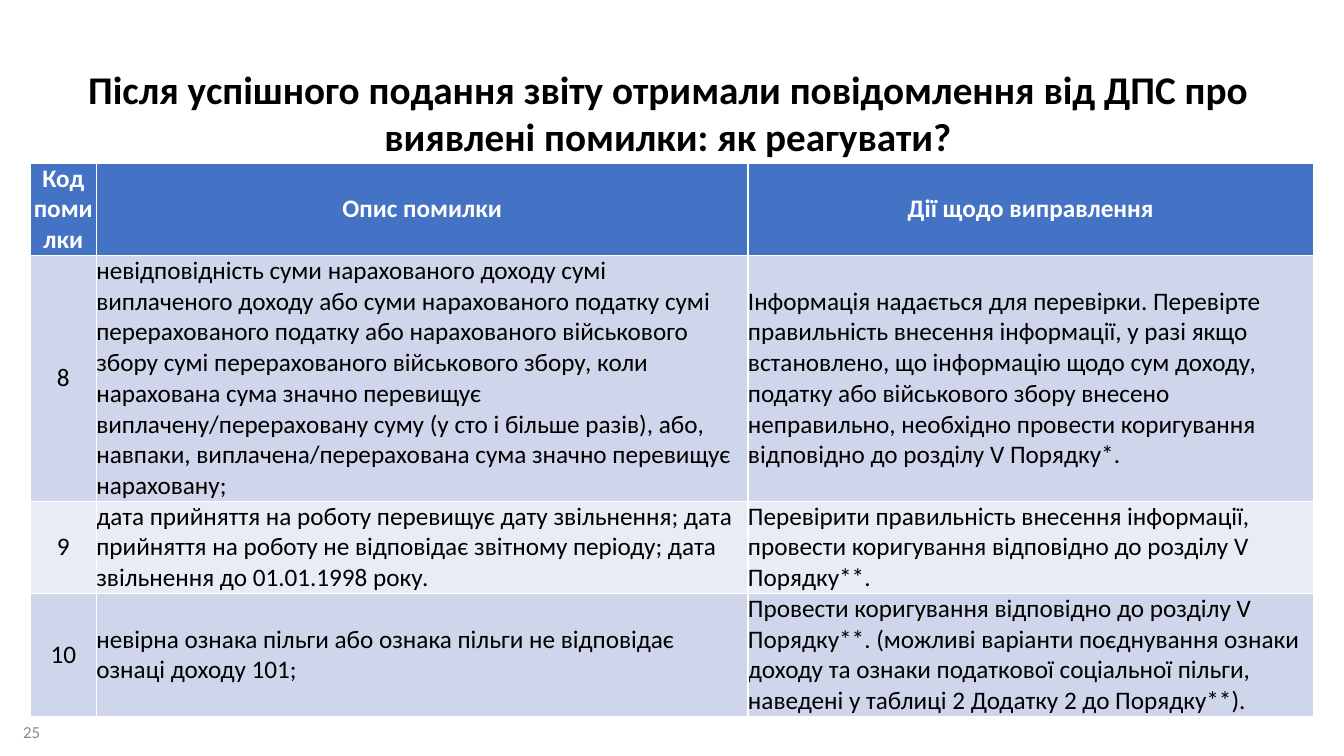
"""Build a slide with a table of report error codes and how to correct them."""
from pptx import Presentation
from pptx import util as u
from pptx.dml.color import RGBColor
from pptx.enum import text as t

THEME = {
    "font": "Calibri", "title": 28, "body": 18, "page": 12,
    "ink": "000000", "white": "FFFFFF", "grey": "898989",
    "head": "4472C4", "bands": ("CFD5EA", "E9EBF5"),
}
TITLE = "Після успішного подання звіту отримали повідомлення від ДПС про виявлені помилки: як реагувати?"
PAGE = "25"
HEAD = (("Код", "помилки"), ("Опис помилки",), ("Дії щодо виправлення",))
ERRORS = [
    ("8",
     "невідповідність суми нарахованого доходу сумі виплаченого доходу або суми нарахованого податку "
     "сумі перерахованого податку або нарахованого військового збору сумі перерахованого військового "
     "збору, коли нарахована сума значно перевищує виплачену/перераховану суму (у сто і більше разів), "
     "або, навпаки, виплачена/перерахована сума значно перевищує нараховану;",
     "Інформація надається для перевірки. Перевірте правильність внесення інформації, у разі якщо "
     "встановлено, що інформацію щодо сум доходу, податку або військового збору внесено неправильно, "
     "необхідно провести коригування відповідно до розділу V Порядку*."),
    ("9",
     "дата прийняття на роботу перевищує дату звільнення; дата прийняття на роботу не відповідає "
     "звітному періоду; дата звільнення до 01.01.1998 року.",
     "Перевірити правильність внесення інформації, провести коригування відповідно до розділу V Порядку**."),
    ("10",
     "невірна ознака пільги або ознака пільги не відповідає ознаці доходу 101;",
     "Провести коригування відповідно до розділу V Порядку**. (можливі варіанти поєднування ознаки "
     "доходу та ознаки податкової соціальної пільги, наведені у таблиці 2 Додатку 2 до Порядку**)."),
]
WIDTHS = (47.2, 465.5, 403.9)
LINES = (3, 8, 3, 4)
LINE = 21.95


def write(frame, paras, size, color, bold=False, center=False):
    """Put each string in its own paragraph, as one styled run."""
    for i, words in enumerate(paras):
        para = frame.add_paragraph() if i else frame.paragraphs[0]
        para.alignment = t.PP_ALIGN.CENTER if center else t.PP_ALIGN.LEFT
        run = para.add_run()
        run.text = words
        font = run.font
        font.name, font.size, font.bold = THEME["font"], u.Pt(THEME[size]), bold
        font.color.rgb = RGBColor.from_string(THEME[color])


def label(slide, box, words, anchor, *style):
    """Add a wrapped text box."""
    frame = slide.shapes.add_textbox(*map(u.Pt, box)).text_frame
    frame.word_wrap = True
    frame.vertical_anchor = anchor
    write(frame, [words], *style)


def grid(slide, left, top):
    """Add the error table."""
    rows = [HEAD] + [[(words,) for words in row] for row in ERRORS]
    table = slide.shapes.add_table(
        len(rows), len(WIDTHS), u.Pt(left), u.Pt(top),
        u.Pt(sum(WIDTHS)), u.Pt(sum(LINES) * LINE)).table
    for col, width in zip(table.columns, WIDTHS):
        col.width = u.Pt(width)
    for r, row in enumerate(rows):
        table.rows[r].height = u.Pt(LINES[r] * LINE)
        fill = THEME["bands"][(r - 1) % 2] if r else THEME["head"]
        for c, paras in enumerate(row):
            cell = table.cell(r, c)
            cell.margin_left = cell.margin_right = cell.margin_top = cell.margin_bottom = 0
            cell.vertical_anchor = t.MSO_ANCHOR.MIDDLE
            cell.fill.solid()
            cell.fill.fore_color.rgb = RGBColor.from_string(fill)
            write(cell.text_frame, paras, "body", "ink" if r else "white", r == 0, r == 0 or c == 0)


def main():
    """Build and save the slide."""
    deck = Presentation()
    deck.slide_width, deck.slide_height = u.Pt(960), u.Pt(540)
    slide = deck.slides.add_slide(deck.slide_layouts[6])
    label(slide, (9.4, 508.3, 39.6, 28.1), PAGE, t.MSO_ANCHOR.MIDDLE, "page", "grey")
    label(slide, (37.4, 43.2, 879.1, 66.2), TITLE, t.MSO_ANCHOR.TOP, "title", "ink", True, True)
    grid(slide, 21.6, 116.6)
    deck.save("out.pptx")


if __name__ == "__main__":
    main()
